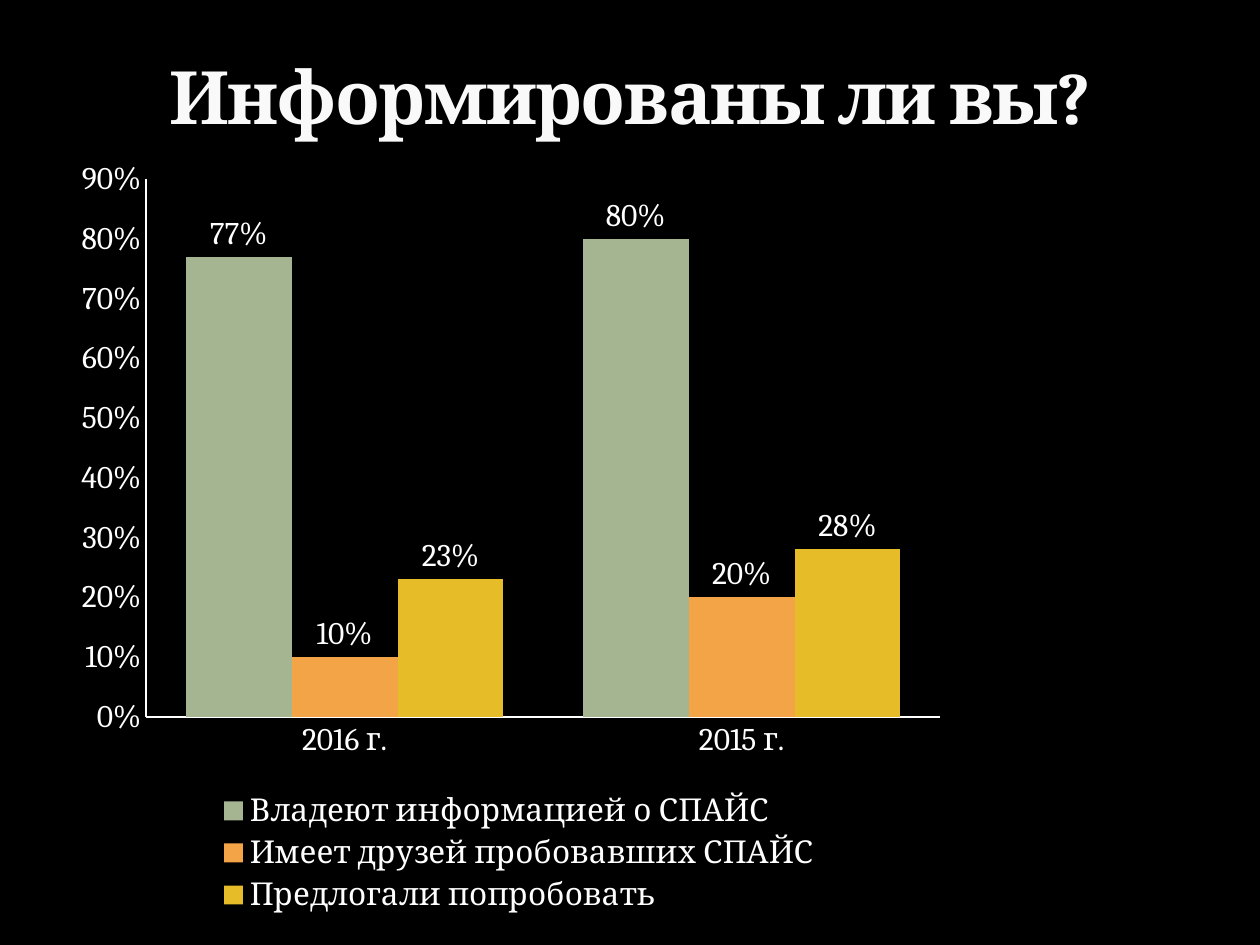
import dataclasses

import lxml.etree
import pptx
import pptx.chart.data
import pptx.dml.color
import pptx.enum.chart
import pptx.enum.text
import pptx.oxml.ns
import pptx.util

Pt = pptx.util.Pt
RGB = pptx.dml.color.RGBColor
qn = pptx.oxml.ns.qn

BLACK = RGB(0x00, 0x00, 0x00)
WHITE = RGB(0xFF, 0xFF, 0xFF)
PALE = RGB(0xF9, 0xF9, 0xF9)
GREEN = RGB(0xA5, 0xB5, 0x92)
ORANGE = RGB(0xF3, 0xA4, 0x47)
GOLD = RGB(0xE7, 0xBC, 0x29)
FONT = "Cambria"


@dataclasses.dataclass
class Series:
    name: str
    values: tuple[float, ...]
    color: RGB


YEARS = ("2016 г.", "2015 г.")
SERIES = (
    Series("Владеют информацией о СПАЙС", (0.77, 0.8), GREEN),
    Series("Имеет друзей пробовавших СПАЙС", (0.1, 0.2), ORANGE),
    Series("Предлогали попробовать", (0.23, 0.28), GOLD),
)


def set_layout(parent, index: int, box: dict[str, float], inner: bool = False) -> None:
    """Place a chart part by fractions of the chart's size."""
    for old in parent.findall(qn("c:layout")):
        parent.remove(old)
    layout = lxml.etree.Element(qn("c:layout"))
    manual = lxml.etree.SubElement(layout, qn("c:manualLayout"))
    rows = [("layoutTarget", "inner")] if inner else []
    rows += [("xMode", "edge"), ("yMode", "edge"), *box.items()]
    for tag, value in rows:
        lxml.etree.SubElement(manual, qn(f"c:{tag}")).set("val", str(value))
    parent.insert(index, layout)


def add_title(slide, text: str) -> None:
    title = slide.shapes.title
    title.left, title.top, title.width, title.height = Pt(36), Pt(12), Pt(648), Pt(71)
    frame = title.text_frame
    frame.text = text
    frame.word_wrap = True
    frame.vertical_anchor = pptx.enum.text.MSO_ANCHOR.BOTTOM
    para = frame.paragraphs[0]
    para.alignment = pptx.enum.text.PP_ALIGN.CENTER
    run = para.runs[0]
    run.font.name, run.font.size, run.font.bold = FONT, Pt(42), True
    run.font.color.rgb = PALE
    run.font._element.set("spc", "-100")


def style_axis(axis) -> None:
    axis.has_major_gridlines = False
    axis.major_tick_mark = pptx.enum.chart.XL_TICK_MARK.NONE
    axis.minor_tick_mark = pptx.enum.chart.XL_TICK_MARK.NONE
    axis.format.line.color.rgb = WHITE
    axis.format.line.width = Pt(1)


def add_bars(slide) -> None:
    data = pptx.chart.data.CategoryChartData(number_format="0%")
    data.categories = YEARS
    for item in SERIES:
        data.add_series(item.name, item.values)
    chart = slide.shapes.add_chart(
        pptx.enum.chart.XL_CHART_TYPE.COLUMN_CLUSTERED,
        Pt(36), Pt(83), Pt(511), Pt(442), data).chart
    chart.has_title = False
    chart.font.name, chart.font.size = FONT, Pt(18)
    chart.font.color.rgb = WHITE

    # Axes
    style_axis(chart.category_axis)
    axis = chart.value_axis
    style_axis(axis)
    axis.minimum_scale, axis.maximum_scale, axis.major_unit = 0, 0.9, 0.1
    axis.tick_labels.number_format = "0%"
    axis.tick_labels.number_format_is_linked = False

    # Columns and their labels
    plot = chart.plots[0]
    plot.gap_width, plot.overlap = 75, 0
    plot.vary_by_categories = False
    for item, bar in zip(SERIES, plot.series):
        bar.format.fill.solid()
        bar.format.fill.fore_color.rgb = item.color
        bar.invert_if_negative = False
        labels = bar.data_labels
        labels.show_value = True
        labels.number_format = "0%"
        labels.number_format_is_linked = False
        labels.position = pptx.enum.chart.XL_LABEL_POSITION.OUTSIDE_END

    # Legend and layout
    chart.has_legend = True
    legend = chart.legend
    legend.position = pptx.enum.chart.XL_LEGEND_POSITION.BOTTOM
    legend.include_in_layout = False
    area = chart._chartSpace.chart.plotArea
    set_layout(area, 0, {"x": 0.093, "y": 0.044, "w": 0.888, "h": 0.695}, True)
    set_layout(legend._element, 1, {"x": 0.16, "y": 0.83, "w": 0.7, "h": 0.17})


def main() -> None:
    deck = pptx.Presentation()
    deck.slide_width, deck.slide_height = Pt(720), Pt(540)
    slide = deck.slides.add_slide(deck.slide_layouts[5])
    slide.background.fill.solid()
    slide.background.fill.fore_color.rgb = BLACK
    add_bars(slide)
    add_title(slide, "Информированы ли вы?")
    deck.save("out.pptx")


if __name__ == "__main__":
    main()
